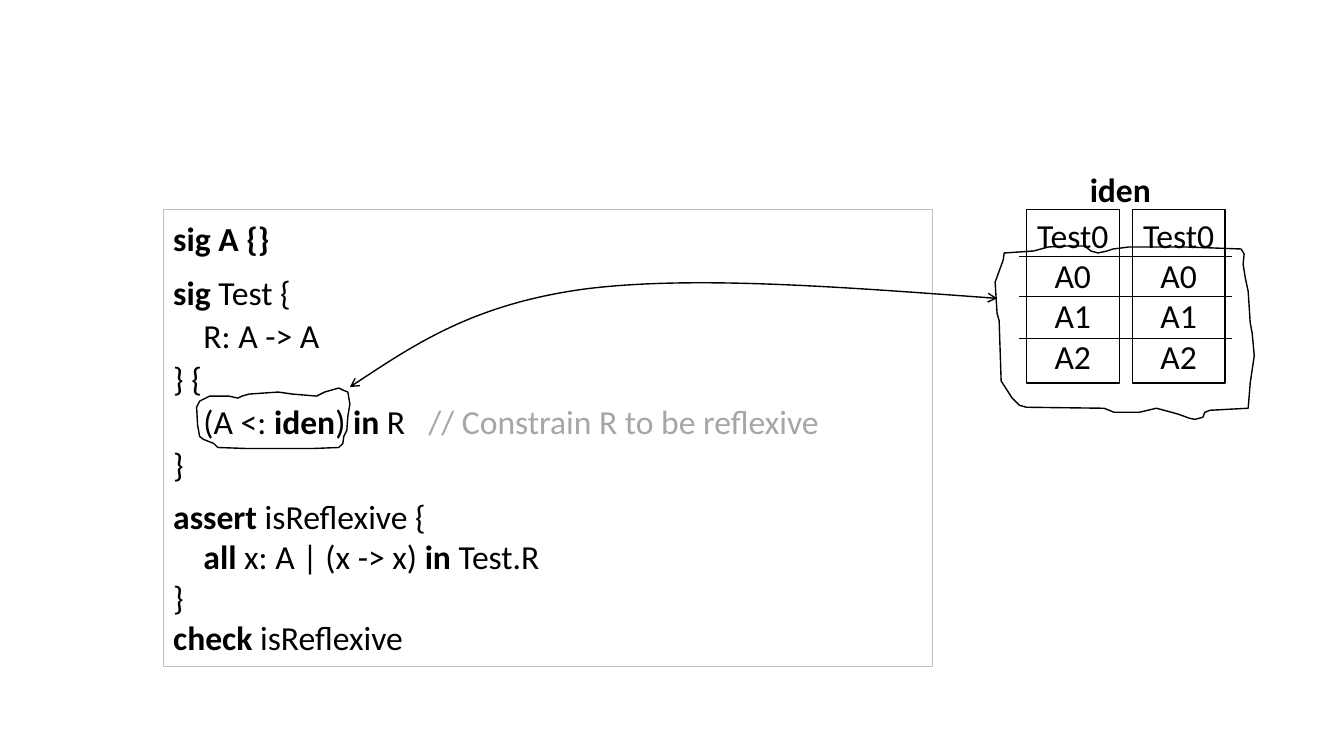
from dataclasses import dataclass
from lxml import etree
from pptx import Presentation
from pptx.dml.color import RGBColor
from pptx.enum.shapes import MSO_CONNECTOR, MSO_SHAPE
from pptx.enum.text import MSO_ANCHOR, PP_ALIGN
from pptx.oxml.ns import qn
from pptx.util import Inches, Pt

RECT = MSO_SHAPE.RECTANGLE
LINE = MSO_CONNECTOR.STRAIGHT
TOP = MSO_ANCHOR.TOP
LEFT, MID = PP_ALIGN.LEFT, PP_ALIGN.CENTER
FONT, SIZE = "Calibri", 24
HUES = {"ink": "000000", "edge": "BFBFBF", "note": "A6A6A6"}
TABS = (0.3, 2.53)

Point = tuple[float, float]


@dataclass
class Span:
    text: str
    bold: bool = False
    hue: str = "ink"


@dataclass
class Para:
    spans: list[Span]
    space: float = 1.0
    after: float = 0
    align: PP_ALIGN = LEFT


@dataclass
class Box:
    left: float
    top: float
    width: float
    height: float
    paras: list[Para]
    edge: str = ""
    wrap: bool = True


CODE = Box(1.62, 2.08, 7.63, 4.53, [
    Para([Span("sig A {}", True)], 1.07, 8),
    Para([
        Span("sig", True), Span(" Test {\n\tR: A -> A\n} {\n\t(A <: "),
        Span("iden", True), Span(") "), Span("in", True), Span(" R\t"),
        Span("// Constrain R to be reflexive\n", hue="note"), Span("}"),
    ], 1.07, 8),
    Para([
        Span("assert", True), Span(" isReflexive {\n\t"),
        Span("all", True), Span(" x: A | (x -> x) "),
        Span("in", True), Span(" Test.R\n}\n"),
        Span("check", True), Span(" isReflexive"),
    ]),
], "edge")
CELLS = [Para([Span(name)], align=MID) for name in ("Test0", "A0", "A1", "A2")]
COLS = [Box(left, 2.08, 0.92, 1.72, CELLS, "ink", False) for left in (10.18, 11.23)]
RULES = (2.54, 2.94, 3.36)
TITLE = Box(10.71, 1.63, 0.82, 0.5, [Para([Span("iden", True)])], wrap=False)

ROWS_LOOP = [
    (10.25, 2.49), (9.96, 2.51), (9.95, 2.58), (9.91, 2.69), (9.87, 2.8),
    (9.89, 3.11), (9.91, 3.18), (9.93, 3.78), (10.04, 3.95), (10.11, 4.02),
    (10.18, 4.04), (10.95, 4.05), (11.05, 4.09), (11.3, 4.09), (11.47, 4.05),
    (11.62, 4.09), (11.69, 4.11), (11.8, 4.15), (11.85, 4.16), (11.93, 4.14),
    (11.95, 4.09), (12, 4.07), (12.38, 4.05), (12.4, 3.8), (12.44, 3.53),
    (12.42, 3.31), (12.4, 3.2), (12.38, 2.89), (12.35, 2.75), (12.33, 2.62),
    (12.34, 2.52), (12.31, 2.47), (11.76, 2.45), (11.2, 2.45), (11.04, 2.47),
    (10.98, 2.49), (10.89, 2.51), (10.82, 2.49), (10.76, 2.44), (10.58, 2.44),
    (10.4, 2.45),
]
TERM_LOOP = [
    (2.23, 3.93), (2.08, 3.93), (1.98, 3.98), (1.95, 4.04), (1.96, 4.22),
    (1.98, 4.33), (2.02, 4.36), (2.12, 4.4), (2.16, 4.44), (2.45, 4.45),
    (3.1, 4.45), (3.36, 4.44), (3.4, 4.4), (3.41, 4.33), (3.44, 4.27),
    (3.45, 4.13), (3.47, 4.01), (3.45, 3.89), (3.4, 3.87), (3.36, 3.85),
    (3.29, 3.87), (3.22, 3.89), (3.14, 3.93), (2.9, 3.91), (2.76, 3.89),
    (2.47, 3.91), (2.4, 3.93), (2.36, 3.95), (2.27, 3.93),
]
ARROW = [
    (3.47, 3.84), (4.09, 3.43), (4.71, 3.02), (5.78, 2.87),
    (6.85, 2.73), (8.37, 2.85), (9.89, 2.96),
]


def tint(hue: str) -> RGBColor:
    return RGBColor.from_string(HUES[hue])


def stroke(shape, hue: str, width: float) -> None:
    shape.line.color.rgb = tint(hue)
    shape.line.width = Pt(width)


def add_span(para, span: Span) -> None:
    for row, text in enumerate(span.text.split("\n")):
        if row:
            para.add_line_break()
        if text:
            run = para.add_run()
            run.text = text
            run.font.name = FONT
            run.font.size = Pt(SIZE)
            run.font.bold = span.bold
            run.font.color.rgb = tint(span.hue)


def add_tabs(para) -> None:
    stops = etree.SubElement(para._p.get_or_add_pPr(), qn("a:tabLst"))
    for stop in TABS:
        etree.SubElement(stops, qn("a:tab"), pos=str(Inches(stop)), algn="l")


def add_box(shapes, box: Box) -> None:
    area = [Inches(n) for n in (box.left, box.top, box.width, box.height)]
    if box.edge:
        shape = shapes.add_shape(RECT, *area)
        shape.shadow.inherit = False
        shape.fill.background()
        stroke(shape, box.edge, 0.75)
    else:
        shape = shapes.add_textbox(*area)
    frame = shape.text_frame
    frame.word_wrap = box.wrap
    frame.vertical_anchor = TOP
    for row, item in enumerate(box.paras):
        para = frame.add_paragraph() if row else frame.paragraphs[0]
        para.alignment = item.align
        para.line_spacing = item.space
        para.space_after = Pt(item.after)
        if any("\t" in span.text for span in item.spans):
            add_tabs(para)
        for span in item.spans:
            add_span(para, span)


def add_rule(shapes, top: float) -> None:
    rule = shapes.add_connector(
        LINE, Inches(10.11), Inches(top), Inches(12.22), Inches(top))
    stroke(rule, "ink", 0.5)
    etree.SubElement(rule._element.spPr, qn("a:effectLst"))


def add_path(shapes, points: list[Point], close: bool):
    spots = [(Inches(x), Inches(y)) for x, y in points]
    pen = shapes.build_freeform(*spots[0])
    pen.add_line_segments(spots[1:], close=close)
    shape = pen.convert_to_shape()
    shape.shadow.inherit = False
    shape.fill.background()
    stroke(shape, "ink", 1)
    return shape


def add_arrow(shapes, points: list[Point]) -> None:
    shape = add_path(shapes, points, False)
    path = shape._element.find(".//" + qn("a:path"))
    legs = path.findall(qn("a:lnTo"))
    for start in range(0, len(legs), 3):
        curve = etree.SubElement(path, qn("a:cubicBezTo"))
        for leg in legs[start:start + 3]:
            curve.append(leg[0])
            path.remove(leg)
    line = shape._element.spPr.find(qn("a:ln"))
    for end in ("a:headEnd", "a:tailEnd"):
        etree.SubElement(line, qn(end), type="arrow")


def main() -> None:
    deck = Presentation()
    deck.slide_width, deck.slide_height = Inches(13.33), Inches(7.5)
    shapes = deck.slides.add_slide(deck.slide_layouts[6]).shapes
    add_box(shapes, CODE)
    group = shapes.add_group_shape()
    for col in COLS:
        add_box(group.shapes, col)
    for top in RULES:
        add_rule(group.shapes, top)
    add_box(shapes, TITLE)
    for loop in (ROWS_LOOP, TERM_LOOP):
        add_path(shapes, loop, True)
    add_arrow(shapes, ARROW)
    deck.save("out.pptx")


if __name__ == "__main__":
    main()
